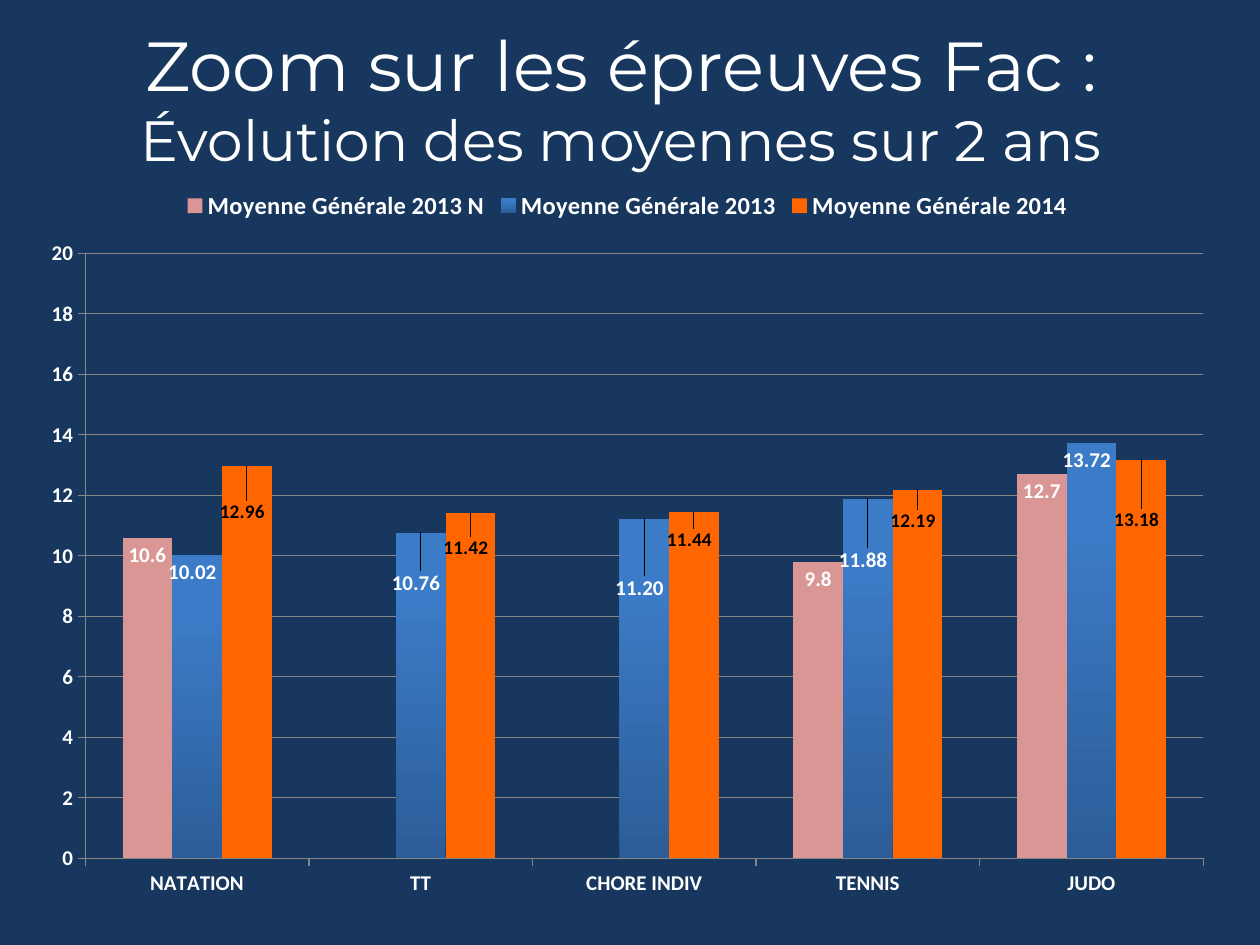
from lxml.etree import SubElement
from pptx import Presentation
from pptx.chart.data import CategoryChartData
from pptx.dml.color import RGBColor
from pptx.enum.chart import XL_CHART_TYPE, XL_LABEL_POSITION, XL_LEGEND_POSITION, XL_TICK_MARK
from pptx.enum.text import MSO_ANCHOR, PP_ALIGN
from pptx.oxml.ns import qn
from pptx.util import Inches, Pt

COLORS = {
    "background": "17375E", "white": "FFFFFF", "black": "000000", "grid": "868686",
    "pink": "D99694", "blue_low": "2C5D98", "blue_high": "3C7BC7", "orange": "FF6600",
}
CATEGORIES = ["NATATION", "TT", "CHORE INDIV", "TENNIS", "JUDO"]
SERIES = [
    {"name": "Moyenne Générale 2013 N", "values": [10.6, None, None, 9.8, 12.7],
     "fill": ["pink"], "format": "#,##0.0", "size": 12, "font": "white", "shifts": {}},
    {"name": "Moyenne Générale 2013", "values": [10.02, 10.76, 11.2, 11.88, 13.72],
     "fill": ["blue_low", "blue_high"], "format": "0.00_€", "size": 12, "font": "white",
     "shifts": {1: (0, 0.045), 2: (0, 0.07), 3: (0, 0.06)}},
    {"name": "Moyenne Générale 2014", "values": [12.96, 11.42, 11.44, 12.19, 13.18],
     "fill": ["orange"], "format": "0.00_€", "size": 11, "font": "black",
     "shifts": {0: (0, 0.04), 1: (0, 0.025), 2: (0, 0.015), 3: (0, 0.02), 4: (0, 0.06)}},
]


def rgb(name):
    """Return the named colour."""
    return RGBColor.from_string(COLORS[name])


def style_font(font, size, color, bold=True, name="Calibri"):
    """Set size, colour, weight and typeface of a font."""
    font.size, font.bold, font.name = Pt(size), bold, name
    font.color.rgb = rgb(color)


def add_layout(parent, index, **settings):
    """Insert a manual chart layout into an element."""
    layout = SubElement(parent, qn("c:layout"))
    manual = SubElement(layout, qn("c:manualLayout"))
    for tag, value in settings.items():
        SubElement(manual, qn(f"c:{tag}")).set("val", str(value))
    parent.insert(index, layout)


def add_title(page, left, top, width, height):
    """Place the two-line heading in the given box."""
    box = page.shapes.add_textbox(left, top, width, height)
    frame = box.text_frame
    frame.word_wrap = True
    frame.vertical_anchor = MSO_ANCHOR.MIDDLE
    para = frame.paragraphs[0]
    para.alignment = PP_ALIGN.CENTER
    style_font(para.font, 39.6, "white", False, "Montserrat")
    first = para.add_run()
    first.text = "Zoom sur les épreuves Fac :"
    first.font.size = Pt(39.6)
    para.add_line_break()
    second = para.add_run()
    second.text = "Évolution des moyennes sur 2 ans"
    second.font.size = Pt(32.4)


def style_series(series, design):
    """Fill one series and set its value labels."""
    fill = series.format.fill
    if len(design["fill"]) == 1:
        fill.solid()
        fill.fore_color.rgb = rgb(design["fill"][0])
    else:
        fill.gradient()
        fill.gradient_angle = 90
        for stop, color, position in zip(fill.gradient_stops, design["fill"], (0, 0.8)):
            stop.color.rgb, stop.position = rgb(color), position
    labels = series.data_labels
    labels.show_value = True
    labels.position = XL_LABEL_POSITION.INSIDE_END
    labels.number_format = design["format"]
    labels.number_format_is_linked = False
    style_font(labels.font, design["size"], design["font"])
    for index, (across, down) in design["shifts"].items():
        label = series.points[index].data_label
        style_font(label.font, design["size"], design["font"])
        label.position = XL_LABEL_POSITION.INSIDE_END
        element = series._element.xpath(f"c:dLbls/c:dLbl[c:idx/@val='{index}']")[0]
        add_layout(element, 1, x=across, y=down)
        number = SubElement(element, qn("c:numFmt"))
        number.set("formatCode", design["format"])
        number.set("sourceLinked", "0")
        element.insert(2, number)


def style_axis(axis):
    """Set ticks, line and label font of an axis."""
    axis.major_tick_mark = XL_TICK_MARK.OUTSIDE
    axis.minor_tick_mark = XL_TICK_MARK.NONE
    axis.format.line.color.rgb = rgb("grid")
    axis.format.line.width = Pt(0.75)
    style_font(axis.tick_labels.font, 12, "white")


def add_averages_chart(page, left, top, width, height):
    """Place the clustered column chart in the given box."""
    data = CategoryChartData()
    data.categories = CATEGORIES
    for design in SERIES:
        data.add_series(design["name"], design["values"])
    chart = page.shapes.add_chart(
        XL_CHART_TYPE.COLUMN_CLUSTERED, left, top, width, height, data).chart
    chart.has_title = False
    style_font(chart.font, 10, "black", False)
    chart.has_legend = True
    chart.legend.position = XL_LEGEND_POSITION.TOP
    chart.legend.include_in_layout = False
    style_font(chart.legend.font, 14, "white")
    plot = chart.plots[0]
    plot.gap_width, plot.overlap, plot.vary_by_categories = 150, 0, False
    for series, design in zip(plot.series, SERIES):
        style_series(series, design)
    style_axis(chart.category_axis)
    axis = chart.value_axis
    style_axis(axis)
    axis.minimum_scale, axis.maximum_scale, axis.major_unit = 0, 20, 2
    axis.tick_labels.number_format = "0"
    axis.tick_labels.number_format_is_linked = False
    axis.has_major_gridlines = True
    axis.major_gridlines.format.line.color.rgb = rgb("grid")
    axis.major_gridlines.format.line.width = Pt(0.75)
    area = chart._chartSpace.xpath("c:chart/c:plotArea")[0]
    for layout in area.findall(qn("c:layout")):
        area.remove(layout)
    add_layout(area, 0, layoutTarget="inner", xMode="edge", yMode="edge",
               x=0.048, y=0.105, w=0.932, h=0.825)


def main():
    """Build and save the deck."""
    deck = Presentation()
    deck.slide_width, deck.slide_height = Inches(10), Inches(7.5)
    page = deck.slides.add_slide(deck.slide_layouts[6])
    page.background.fill.solid()
    page.background.fill.fore_color.rgb = rgb("background")
    add_title(page, Inches(0.43), Inches(0.15), Inches(9), Inches(1.25))
    add_averages_chart(page, Inches(0.22), Inches(1.4), Inches(9.52), Inches(5.82))
    deck.save("out.pptx")


if __name__ == "__main__":
    main()
